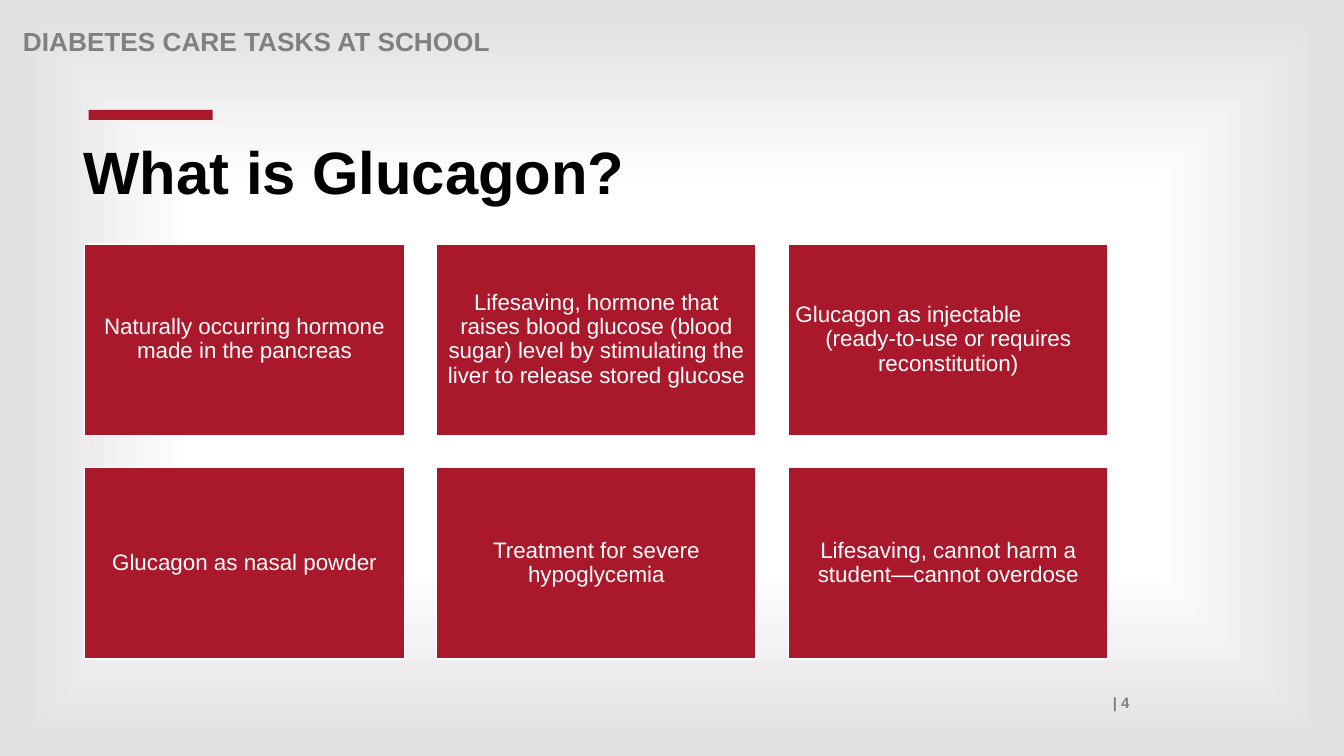
"""Build the "What is Glucagon?" slide."""
import pptx
import pptx.dml.color
import pptx.enum.shapes
import pptx.enum.text
import pptx.oxml
import pptx.oxml.ns
import pptx.util

Inches = pptx.util.Inches
Pt = pptx.util.Pt
ALIGN = pptx.enum.text.PP_ALIGN

HEADER = "DIABETES CARE TASKS AT SCHOOL"
TITLE = "What is Glucagon?"
PAGE_NUMBER = "| 4"
CARDS = [
    [("Naturally occurring hormone made in the pancreas", ALIGN.CENTER)],
    [("Lifesaving, hormone that raises blood glucose (blood sugar) level "
      "by stimulating the liver to release stored glucose", ALIGN.CENTER)],
    [("Glucagon as injectable", ALIGN.LEFT),
     ("(ready-to-use or requires reconstitution)", ALIGN.CENTER)],
    [("Glucagon as nasal powder", ALIGN.CENTER)],
    [("Treatment for severe hypoglycemia", ALIGN.CENTER)],
    [("Lifesaving, cannot harm a student—cannot overdose", ALIGN.CENTER)],
]
RED, GRAY, BLACK, WHITE = "AA182C", "808080", "000000", "FFFFFF"
GRADIENT_STOPS = [(12, WHITE), (50, WHITE), (98, "E0E0E0")]
COLUMNS = 3
CARD_LEFT, CARD_TOP = 0.84, 2.42
CARD_WIDTH, CARD_HEIGHT = 3.17, 1.9
CARD_GAP = 0.32


def color(value):
    return pptx.dml.color.RGBColor.from_string(value)


def set_background(slide):
    stops = "".join(
        f'<a:gs pos="{position * 1000}"><a:srgbClr val="{value}"/></a:gs>'
        for position, value in GRADIENT_STOPS)
    background = pptx.oxml.parse_xml(
        f'<p:bg {pptx.oxml.ns.nsdecls("p", "a")}><p:bgPr>'
        f'<a:gradFill rotWithShape="1"><a:gsLst>{stops}</a:gsLst>'
        '<a:path path="shape">'
        '<a:fillToRect l="50000" t="50000" r="50000" b="50000"/></a:path>'
        '</a:gradFill><a:effectLst/></p:bgPr></p:bg>')
    slide.shapes._spTree.addprevious(background)


def write(frame, paragraphs, size, text_color, bold=False, spacing=0.9):
    frame.word_wrap = True
    for index, (text, alignment) in enumerate(paragraphs):
        paragraph = frame.add_paragraph() if index else frame.paragraphs[0]
        paragraph.text = text
        paragraph.alignment = alignment
        paragraph.line_spacing = spacing
        paragraph.font.name = "Arial"
        paragraph.font.size = Pt(size)
        paragraph.font.bold = bold
        paragraph.font.color.rgb = color(text_color)


def add_text(slide, box, text, size, text_color, alignment=ALIGN.LEFT, spacing=0.9):
    shape = slide.shapes.add_textbox(*map(Inches, box))
    write(shape.text_frame, [(text, alignment)], size, text_color, True, spacing)


def add_rectangle(slide, box):
    shape = slide.shapes.add_shape(
        pptx.enum.shapes.MSO_SHAPE.RECTANGLE, *map(Inches, box))
    shape.shadow.inherit = False
    shape.fill.solid()
    shape.fill.fore_color.rgb = color(RED)
    shape.line.fill.background()
    return shape


def add_card(slide, index, paragraphs):
    row, column = divmod(index, COLUMNS)
    left = CARD_LEFT + column * (CARD_WIDTH + CARD_GAP)
    top = CARD_TOP + row * (CARD_HEIGHT + CARD_GAP)
    card = add_rectangle(slide, (left, top, CARD_WIDTH, CARD_HEIGHT))
    card.line.color.rgb = color(WHITE)
    card.line.width = Pt(1)
    frame = card.text_frame
    frame.margin_left = frame.margin_right = Inches(0.07)
    frame.margin_top = frame.margin_bottom = Inches(0.07)
    frame.vertical_anchor = pptx.enum.text.MSO_ANCHOR.MIDDLE
    write(frame, paragraphs, 16, WHITE)


def main():
    presentation = pptx.Presentation()
    presentation.slide_width = Inches(13.33)
    presentation.slide_height = Inches(7.5)
    slide = presentation.slides.add_slide(presentation.slide_layouts[6])
    set_background(slide)
    add_text(slide, (1.21, 6.83, 10.09, 0.28), PAGE_NUMBER, 10.7, GRAY, ALIGN.RIGHT, 1.0)
    add_text(slide, (0.13, 0.24, 11, 0.28), HEADER, 18.7, GRAY)
    add_rectangle(slide, (0.88, 1.09, 1.23, 0.1))
    add_text(slide, (0.73, 1.37, 11.03, 1.3), TITLE, 42.7, BLACK)
    for index, paragraphs in enumerate(CARDS):
        add_card(slide, index, paragraphs)
    presentation.save("out.pptx")


if __name__ == "__main__":
    main()
